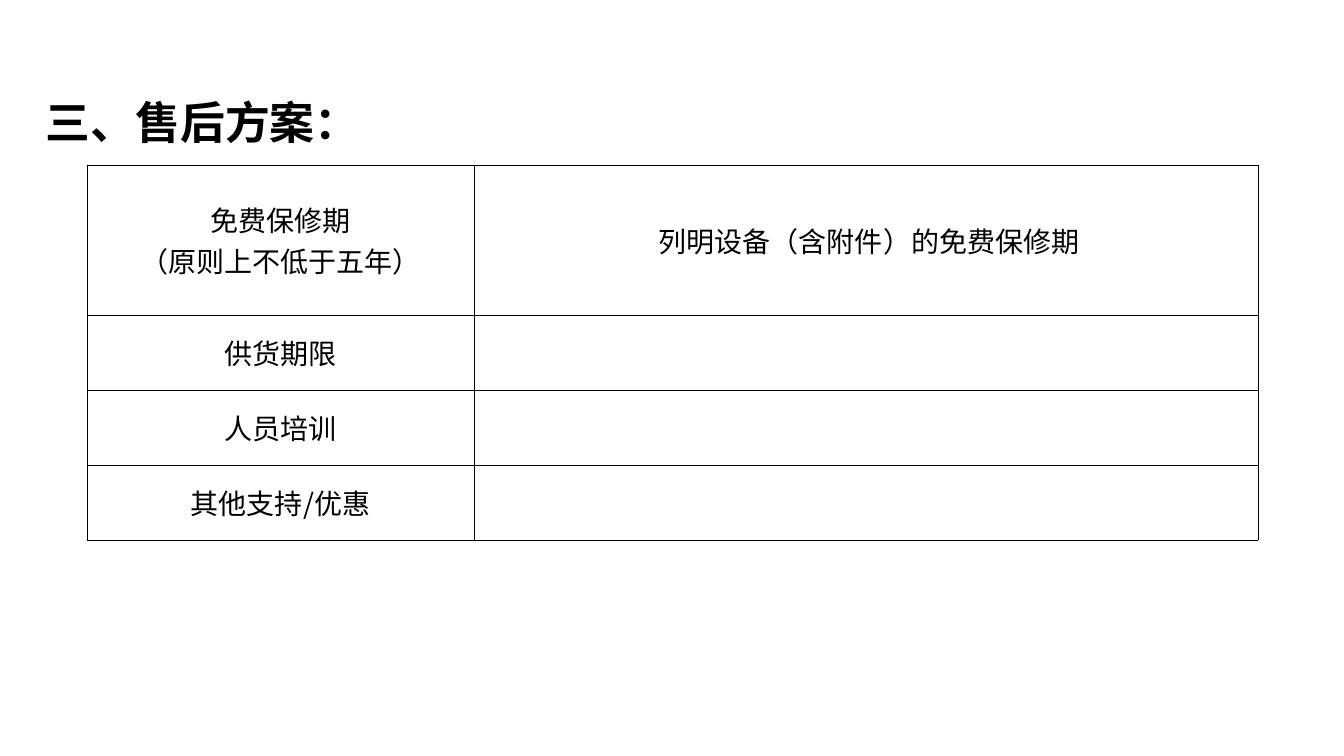
"""Build the after-sales plan slide."""
import lxml.etree
import pptx
import pptx.dml.color
import pptx.enum.text
import pptx.oxml.ns
import pptx.util

PX = 12192000 / 1344
FONT = "Noto Sans CJK SC"
COLORS = {"text": "000000", "border": "000000"}
COLUMN_WIDTHS = [387, 784]
ROW_HEIGHTS = [150, 75, 75, 75]
TERMS = [
    ("免费保修期\n（原则上不低于五年）", " 列明设备（含附件）的免费保修期"),
    ("供货期限", ""),
    ("人员培训", ""),
    ("其他支持/优惠", ""),
]


def px(n):
    return pptx.util.Emu(round(n * PX))


def format_text(tf, size, align, bold=False):
    for p in tf.paragraphs:
        p.alignment = align
        for r in p.runs:
            r.font.size = pptx.util.Pt(size)
            r.font.bold = bold
            r.font.color.rgb = pptx.dml.color.RGBColor.from_string(COLORS["text"])
            r.font.name = FONT
            ea = lxml.etree.SubElement(r.font._element, pptx.oxml.ns.qn("a:ea"))
            ea.set("typeface", FONT)


def set_borders(cell):
    tc_pr = cell._tc.get_or_add_tcPr()
    for side in ("lnL", "lnR", "lnT", "lnB"):
        ln = lxml.etree.SubElement(tc_pr, pptx.oxml.ns.qn("a:" + side))
        ln.set("w", str(pptx.util.Pt(0.5)))
        fill = lxml.etree.SubElement(ln, pptx.oxml.ns.qn("a:solidFill"))
        color = lxml.etree.SubElement(fill, pptx.oxml.ns.qn("a:srgbClr"))
        color.set("val", COLORS["border"])


def add_title(s, x, y, w, h):
    tf = s.shapes.add_textbox(px(x), px(y), px(w), px(h)).text_frame
    tf.word_wrap = True
    tf.vertical_anchor = pptx.enum.text.MSO_ANCHOR.MIDDLE
    tf.text = "三、售后方案："
    format_text(tf, 32, pptx.enum.text.PP_ALIGN.LEFT, bold=True)


def add_terms_table(s, x, y, w, h):
    table = s.shapes.add_table(
        len(TERMS), len(COLUMN_WIDTHS), px(x), px(y), px(w), px(h)
    ).table
    table.first_row = table.horz_banding = False
    for column, width in zip(table.columns, COLUMN_WIDTHS):
        column.width = px(width)
    for row, height, texts in zip(table.rows, ROW_HEIGHTS, TERMS):
        row.height = px(height)
        for cell, text in zip(row.cells, texts):
            cell.margin_left = cell.margin_right = 0
            cell.margin_top = cell.margin_bottom = 0
            cell.vertical_anchor = pptx.enum.text.MSO_ANCHOR.MIDDLE
            set_borders(cell)
            cell.fill.background()
            cell.text_frame.text = text
            format_text(cell.text_frame, 20, pptx.enum.text.PP_ALIGN.CENTER)


def main():
    prs = pptx.Presentation()
    prs.slide_width, prs.slide_height = px(1344), px(756)
    s = prs.slides.add_slide(prs.slide_layouts[6])
    add_terms_table(s, 87, 165, sum(COLUMN_WIDTHS), sum(ROW_HEIGHTS))
    add_title(s, 36, 90, 436, 63)
    prs.save("out.pptx")


if __name__ == "__main__":
    main()
